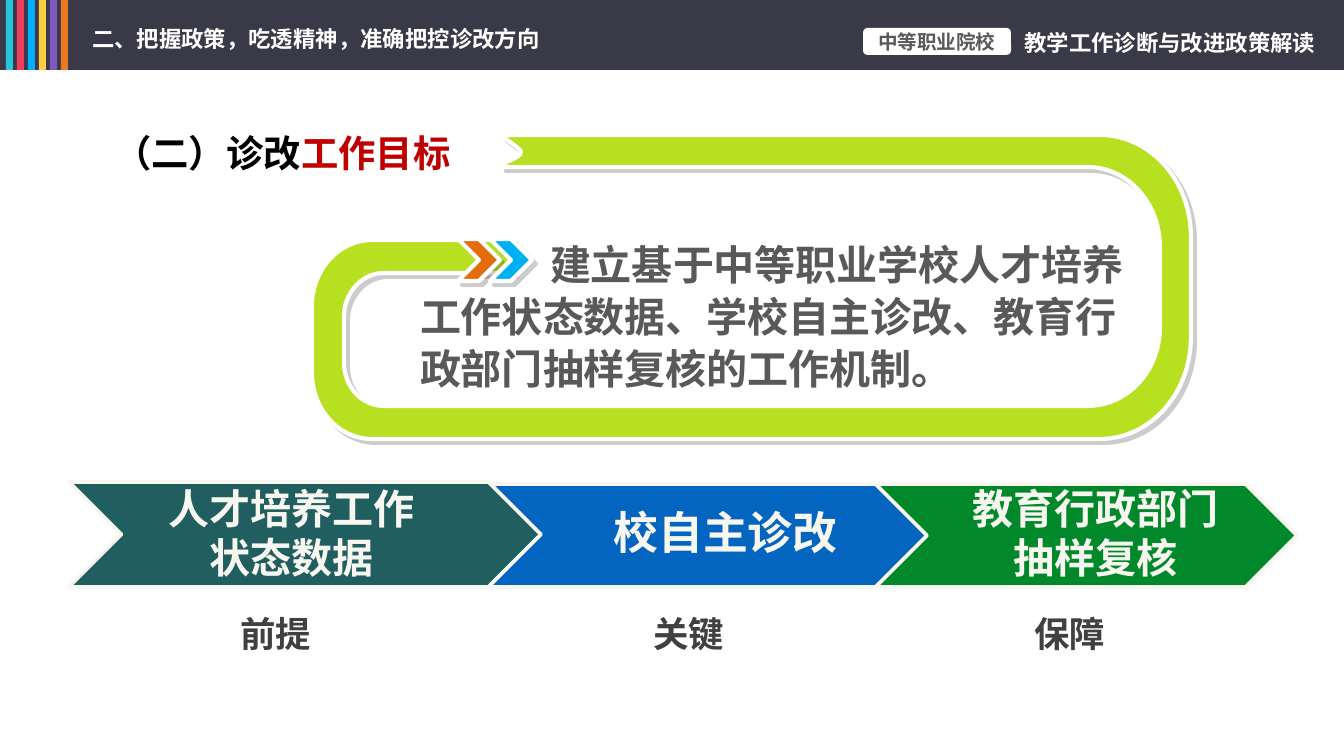
from dataclasses import dataclass

import lxml.etree
import pptx
import pptx.dml.color
import pptx.enum.shapes
import pptx.enum.text
import pptx.oxml.ns
import pptx.util

PX = 914400 / 134.4
FONT = "Noto Sans CJK SC"
SHAPES = pptx.enum.shapes.MSO_SHAPE
ALIGN = pptx.enum.text.PP_ALIGN
ANCHOR = pptx.enum.text.MSO_ANCHOR

Box = tuple[int, int, int, int]
Point = tuple[int, int]


@dataclass(frozen=True)
class Stage:
    """One arrow of the process, its title and the role named below it."""
    arrow: Box
    fill: str
    title: list[str]
    title_box: Box
    size: int
    role: str
    role_left: int


STAGES = [
    Stage((69, 482, 472, 105), "205E60", ["人才培养工作", "状态数据"],
          (143, 478, 297, 110), 22, "前提", 227),
    Stage((470, 484, 457, 103), "0365C0", ["校自主诊改"],
          (577, 500, 297, 65), 24, "关键", 640),
    Stage((852, 484, 445, 103), "00882B", ["教育行政部门抽样复核"],
          (947, 478, 297, 110), 22, "保障", 1021),
]
STRIPES = ["26C6DA", "F23E5C", "00B0FF", "FFCD40", "7E57C1", "EC7825"]

# Each step is one point for a line, or three for a Bézier curve.
RIBBON_START = (502, 135)
RIBBON: list[list[Point]] = [
    [(1100, 135)], [(1150, 135), (1191, 180), (1191, 237)],
    [(1191, 337)], [(1191, 394), (1150, 439), (1100, 439)],
    [(513, 439)], [(502, 439)],
    [(372, 439)], [(339, 439), (312, 410), (312, 372)],
    [(312, 306)], [(312, 270), (339, 240), (372, 240)],
    [(513, 240)], [(513, 273)],
    [(384, 273)], [(362, 273), (344, 293), (344, 317)],
    [(344, 362)], [(344, 387), (362, 406), (384, 406)],
    [(513, 406)],
    [(1087, 406)], [(1128, 406), (1160, 371), (1160, 327)],
    [(1160, 247)], [(1160, 203), (1128, 167), (1087, 167)],
    [(502, 167)], [(502, 161), (521, 159), (521, 152)],
    [(521, 148), (502, 138), (502, 135)],
]


def px(length: float) -> int:
    return round(length * PX)


def color(value: str) -> pptx.dml.color.RGBColor:
    return pptx.dml.color.RGBColor.from_string(value)


def style(shape, fill: str, line: str | None = None, width: float = 0,
          shadow: bool = False) -> None:
    shape.fill.solid()
    shape.fill.fore_color.rgb = color(fill)
    if line:
        shape.line.color.rgb = color(line)
        shape.line.width = pptx.util.Pt(width)
    else:
        shape.line.fill.background()
    shape.shadow.inherit = False
    if shadow:
        qn = pptx.oxml.ns.qn
        effects = shape._element.spPr.find(qn("a:effectLst"))
        outer = lxml.etree.SubElement(
            effects, qn("a:outerShdw"), dist=str(pptx.util.Pt(3)),
            dir="2700000", algn="tl", rotWithShape="0")
        black = lxml.etree.SubElement(outer, qn("a:srgbClr"), val="000000")
        lxml.etree.SubElement(black, qn("a:alpha"), val="20000")


def add_block(slide, kind, box: Box, fill: str, **outline):
    shape = slide.shapes.add_shape(kind, *map(px, box))
    style(shape, fill, **outline)
    return shape


def write(shape, paragraphs: list[list[tuple[str, str]]], *, size: float,
          align=ALIGN.LEFT, anchor=ANCHOR.TOP, wrap: bool = True,
          inset: Point = (13, 7), spacing: float | None = None,
          indent: int = 0) -> None:
    """Fill a shape with paragraphs, each a list of (text, colour) runs."""
    frame = shape.text_frame
    frame.word_wrap = wrap
    frame.vertical_anchor = anchor
    frame.margin_left = frame.margin_right = px(inset[0])
    frame.margin_top = frame.margin_bottom = px(inset[1])
    for index, runs in enumerate(paragraphs):
        paragraph = frame.add_paragraph() if index else frame.paragraphs[0]
        paragraph.alignment = align
        if spacing:
            paragraph.line_spacing = pptx.util.Pt(spacing)
        if indent:
            paragraph._p.get_or_add_pPr().set("indent", str(px(indent)))
        for text, text_color in runs:
            run = paragraph.add_run()
            run.text = text
            run.font.size = pptx.util.Pt(size)
            run.font.bold = True
            run.font.name = FONT
            run.font.color.rgb = color(text_color)
            lxml.etree.SubElement(run.font._element, pptx.oxml.ns.qn("a:ea"),
                                  typeface=FONT)


def add_text(slide, box: Box, paragraphs: list[list[tuple[str, str]]],
             **text_format) -> None:
    write(slide.shapes.add_textbox(*map(px, box)), paragraphs, **text_format)


def add_ribbon(slide) -> None:
    """Draw the outline as lines, then join each group of three into a curve."""
    qn = pptx.oxml.ns.qn
    builder = slide.shapes.build_freeform(*map(px, RIBBON_START))
    builder.add_line_segments(
        [(px(x), px(y)) for step in RIBBON for x, y in step], close=True)
    shape = builder.convert_to_shape()
    segments = iter(list(shape._element.iter(qn("a:lnTo"))))
    for step in RIBBON:
        first, *others = [next(segments) for _ in step]
        if others:
            first.tag = qn("a:cubicBezTo")
        for segment in others:
            first.append(segment[0])
            segment.getparent().remove(segment)
    style(shape, "B7E020", line="FFFFFF", width=2.25, shadow=True)


def add_header(slide) -> None:
    add_block(slide, SHAPES.RECTANGLE, (0, 0, 1344, 70), "3A3947")
    for index, fill in enumerate(STRIPES):
        add_block(slide, SHAPES.RECTANGLE, (6 + 11 * index, 0, 7, 70), fill)
    add_text(slide, (79, 19, 480, 40),
             [[("二、把握政策，吃透精神，准确把控诊改方向", "FFFFFF")]],
             size=12, anchor=ANCHOR.MIDDLE, wrap=False)
    badge = add_block(slide, SHAPES.ROUNDED_RECTANGLE, (863, 28, 148, 27), "FFFFFF")
    write(badge, [[("中等职业院校", "595959")]], size=10.5, align=ALIGN.CENTER,
          anchor=ANCHOR.MIDDLE, inset=(5, 0))
    add_text(slide, (1023, 29, 294, 27),
             [[("教学工作诊断与改进政策解读", "FFFFFF")]], size=12,
             align=ALIGN.CENTER, anchor=ANCHOR.MIDDLE, wrap=False, inset=(0, 0))


def add_goal(slide) -> None:
    add_text(slide, (99, 123, 367, 59),
             [[("（二）诊改", "000000"), ("工作目标", "C00000")]],
             size=20, align=ALIGN.CENTER, wrap=False)
    goal = "建立基于中等职业学校人才培养工作状态数据、学校自主诊改、教育行政部门抽样复核的工作机制。"
    add_text(slide, (407, 229, 740, 168), [[(goal, "595959")]],
             size=22, spacing=28, indent=130)


def add_stages(slide) -> None:
    for stage in reversed(STAGES):
        add_block(slide, SHAPES.CHEVRON, stage.arrow, stage.fill,
                  line="F7F7F0", width=2)
    for stage in STAGES:
        add_text(slide, stage.title_box,
                 [[(line, "F7F7F0")] for line in stage.title],
                 size=stage.size, align=ALIGN.CENTER, inset=(11, 5))
    for stage in STAGES:
        add_text(slide, (stage.role_left, 605, 98, 56),
                 [[(stage.role, "404040")]], size=19, align=ALIGN.CENTER,
                 wrap=False)


def main() -> None:
    presentation = pptx.Presentation()
    presentation.slide_width, presentation.slide_height = px(1344), px(756)
    slide = presentation.slides.add_slide(presentation.slide_layouts[6])
    add_header(slide)
    add_goal(slide)
    add_stages(slide)
    add_ribbon(slide)
    for left, fill in ((458, "E46C0A"), (490, "00B0F0")):
        add_block(slide, SHAPES.CHEVRON, (left, 239, 42, 42), fill,
                  line="FFFFFF", width=2.25, shadow=True)
    presentation.save("out.pptx")


if __name__ == "__main__":
    main()
